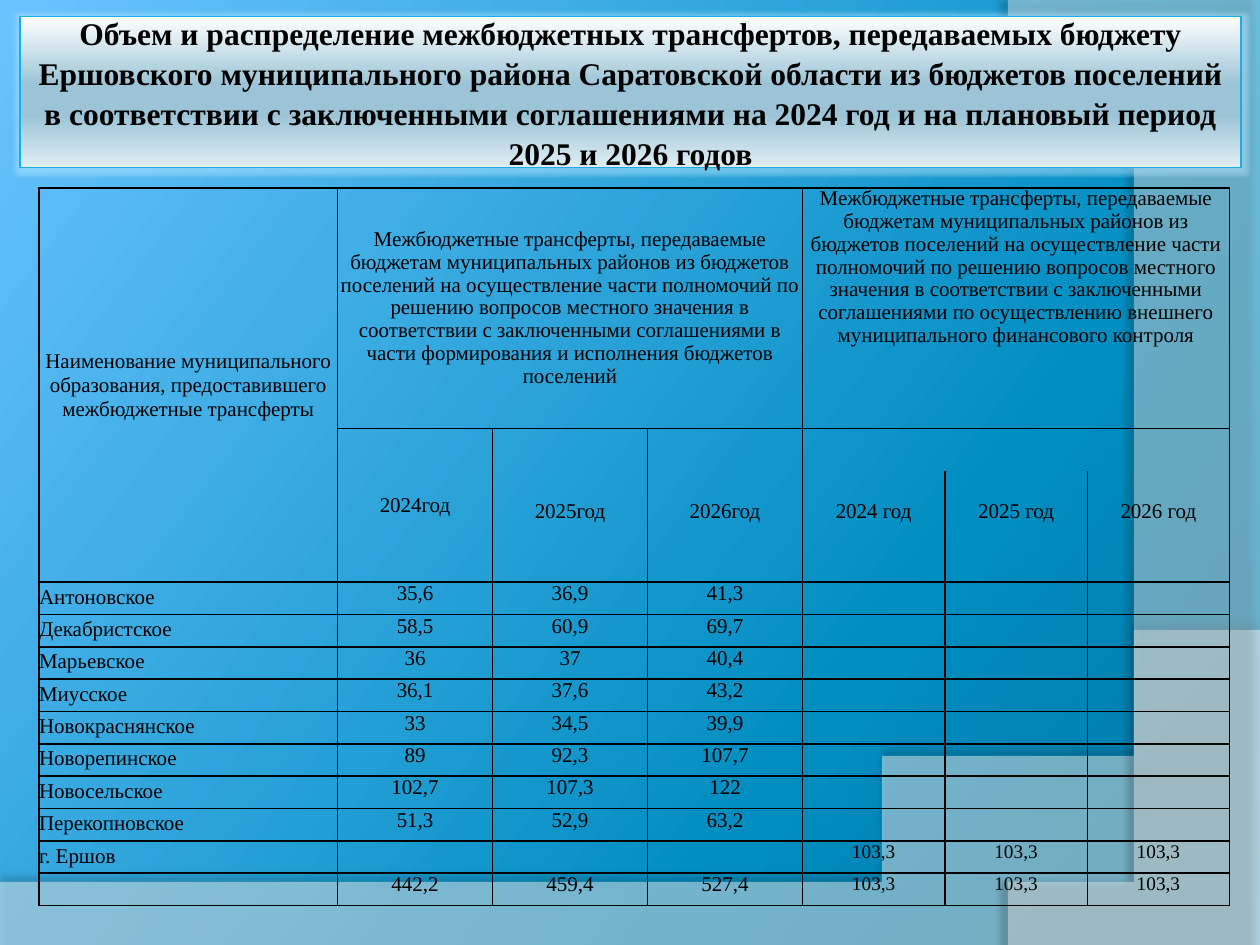
"""Build the slide on inter-budget transfers from settlements to the Ershov district."""
from lxml.etree import SubElement, fromstring
from pptx import Presentation
from pptx.dml.color import RGBColor
from pptx.enum.text import MSO_ANCHOR, PP_ALIGN
from pptx.oxml.ns import qn
from pptx.util import Inches, Pt

BLACK = RGBColor(0x00, 0x00, 0x00)
WHITE = RGBColor(0xFF, 0xFF, 0xFF)
CYAN = RGBColor(0x1B, 0xAD, 0xE4)
PALE_CYAN = RGBColor(0xB5, 0xE8, 0xFF)
STEEL = RGBColor(0x9C, 0xC4, 0xD6)
MIST = RGBColor(0xE0, 0xEE, 0xF4)
DEEP_BLUE = RGBColor(0x00, 0x76, 0xA1)
BLUE = RGBColor(0x00, 0x8D, 0xC0)
SKY = RGBColor(0x6A, 0xC3, 0xFF)
FONT = "Times New Roman"
DRAWING = "http://schemas.openxmlformats.org/drawingml/2006/main"


def set_gradient(fill, angle, stops):
    fill.gradient()
    fill.gradient_angle = angle
    stop_list = fill.gradient_stops[0]._gs.getparent()
    for stop in list(stop_list):
        stop_list.remove(stop)
    for position, color in stops:
        stop = SubElement(stop_list, qn("a:gs"), pos=str(position * 1000))
        SubElement(stop, qn("a:srgbClr"), val=str(color))


def set_text(text_frame, text, size, align, spacing=None, bold=False):
    paragraph = text_frame.paragraphs[0]
    paragraph.text = text
    paragraph.alignment = align
    paragraph.line_spacing = spacing
    font = paragraph.font
    font.name, font.size, font.bold = FONT, Pt(size), bold
    font.color.rgb = BLACK


presentation = Presentation()
presentation.slide_width, presentation.slide_height = Inches(10), Inches(7.5)
slide = presentation.slides.add_slide(presentation.slide_layouts[5])
set_gradient(slide.background.fill, 143, [(0, DEEP_BLUE), (30, BLUE), (100, SKY)])

waves = [
    ([(0, 7.05), (0, 7.5), (10, 7.5)],
     [(10, 5.2), (5.59, 7.29), (3.91, 7.19), (0, 7.05)], 45, 35, 3.5, 270),
    ([(10, 0.02), (10, 7.5)],
     [(8.21, 7.5), (9.35, 6.19), (10.18, 3), (8, 0)], 40, 45, 4, 180),
]
for corners, curve, opacity, shadow_opacity, distance, direction in waves:
    points = list(corners)
    for step in range(41):
        t = step / 40
        weights = ((1 - t) ** 3, 3 * t * (1 - t) ** 2, 3 * t * t * (1 - t), t ** 3)
        points.append(tuple(sum(w * point[axis] for w, point in zip(weights, curve))
                            for axis in (0, 1)))
    builder = slide.shapes.build_freeform(*points[0], scale=Inches(1))
    builder.add_line_segments(points[1:], close=True)
    wave = builder.convert_to_shape()
    wave.fill.solid()
    wave.fill.fore_color.rgb = WHITE
    wave.line.fill.background()
    properties = wave._element.spPr
    SubElement(properties.find(".//" + qn("a:srgbClr")), qn("a:alpha"), val=str(opacity * 1000))
    properties.append(fromstring(
        f'<a:effectLst xmlns:a="{DRAWING}"><a:outerShdw blurRad="{Pt(4)}" '
        f'dist="{Pt(distance)}" dir="{direction * 60000}"><a:srgbClr val="{BLACK}">'
        f'<a:alpha val="{shadow_opacity * 1000}"/></a:srgbClr></a:outerShdw></a:effectLst>'))

title = slide.shapes.title
slide.shapes._spTree.append(title._element)
title.left, title.top, title.width, title.height = map(Inches, (0.16, 0.13, 9.69, 1.2))
set_gradient(title.fill, 270, [(0, WHITE), (45, STEEL), (65, STEEL), (100, MIST)])
title.line.color.rgb = CYAN
title.line.width = Pt(1)
title._element.spPr.append(fromstring(
    f'<a:effectLst xmlns:a="{DRAWING}"><a:glow rad="{Pt(5)}"><a:srgbClr val="{PALE_CYAN}">'
    '<a:alpha val="50000"/></a:srgbClr></a:glow></a:effectLst>'))
frame = title.text_frame
frame.word_wrap = True
frame.vertical_anchor = MSO_ANCHOR.MIDDLE
frame.margin_left = frame.margin_right = frame.margin_top = frame.margin_bottom = Inches(0.05)
set_text(frame, "Объем и распределение межбюджетных трансфертов, передаваемых бюджету "
         "Ершовского муниципального района Саратовской области из бюджетов поселений "
         "в соответствии с заключенными соглашениями на 2024 год и на плановый период "
         "2025 и 2026 годов", 18, PP_ALIGN.CENTER, 1.05, True)

transfers = ("Межбюджетные трансферты, передаваемые бюджетам муниципальных районов из бюджетов "
             "поселений на осуществление части полномочий по решению вопросов местного значения "
             "в соответствии с заключенными соглашениями ")
rows = [
    ["Наименование муниципального образования, предоставившего межбюджетные трансферты",
     transfers + "в части формирования и исполнения бюджетов поселений", "", "",
     transfers + "по осуществлению внешнего муниципального финансового контроля", "", ""],
    ["", "2024год", "", "", "", "", ""],
    ["", "", "2025год", "2026год", "2024 год", "2025 год", "2026 год"],
    ["Антоновское", "35,6", "36,9", "41,3", "", "", ""],
    ["Декабристское", "58,5", "60,9", "69,7", "", "", ""],
    ["Марьевское", "36", "37", "40,4", "", "", ""],
    ["Миусское", "36,1", "37,6", "43,2", "", "", ""],
    ["Новокраснянское", "33", "34,5", "39,9", "", "", ""],
    ["Новорепинское", "89", "92,3", "107,7", "", "", ""],
    ["Новосельское", "102,7", "107,3", "122", "", "", ""],
    ["Перекопновское", "51,3", "52,9", "63,2", "", "", ""],
    ["г. Ершов", "", "", "", "103,3", "103,3", "103,3"],
    ["", "442,2", "459,4", "527,4", "103,3", "103,3", "103,3"],
]
column_widths = [2.37] + [1.23] * 3 + [1.13] * 3
row_heights = [1.91, 0.34, 0.88] + [0.257] * 10
table = slide.shapes.add_table(len(rows), len(column_widths), Inches(0.31), Inches(1.49),
                               Inches(sum(column_widths)), Inches(sum(row_heights))).table
table.first_row = table.horz_banding = False
for column, width in zip(table.columns, column_widths):
    column.width = Inches(width)
for row, height in zip(table.rows, row_heights):
    row.height = Inches(height)
for first, last in [((0, 0), (2, 0)), ((0, 1), (0, 3)), ((0, 4), (0, 6)),
                    ((1, 1), (2, 1)), ((1, 4), (1, 6))]:
    table.cell(*first).merge(table.cell(*last))

for row_index, texts in enumerate(rows):
    for column_index, text in enumerate(texts):
        cell = table.cell(row_index, column_index)
        if cell.is_spanned:
            continue
        cell.margin_left = cell.margin_right = cell.margin_top = cell.margin_bottom = 0
        open_edge = {1: "lnB", 2: "lnT"}.get(row_index) if column_index > 1 else None
        for edge in ("lnL", "lnR", "lnT", "lnB"):
            line = SubElement(cell._tc.get_or_add_tcPr(), qn("a:" + edge), w=str(Pt(1)))
            if edge == open_edge:
                SubElement(line, qn("a:noFill"))
            else:
                SubElement(SubElement(line, qn("a:solidFill")), qn("a:srgbClr"), val=str(BLACK))
        cell.fill.background()
        is_name = column_index == 0 and row_index > 2
        size = 11 if column_index > 3 and row_index > 10 else 12
        spacing = 1.15 if is_name or row_index == 2 else None
        if row_index < 2:
            spacing = Pt(13 if column_index else 13.7)
            if column_index < 4:
                cell.vertical_anchor = MSO_ANCHOR.MIDDLE
        elif row_index == 2:
            cell.margin_top = Inches(0.2)
        elif not is_name:
            cell.margin_left = cell.margin_right = Inches(0.01)
        set_text(cell.text_frame, text, size, PP_ALIGN.LEFT if is_name else PP_ALIGN.CENTER, spacing)

presentation.save("out.pptx")
